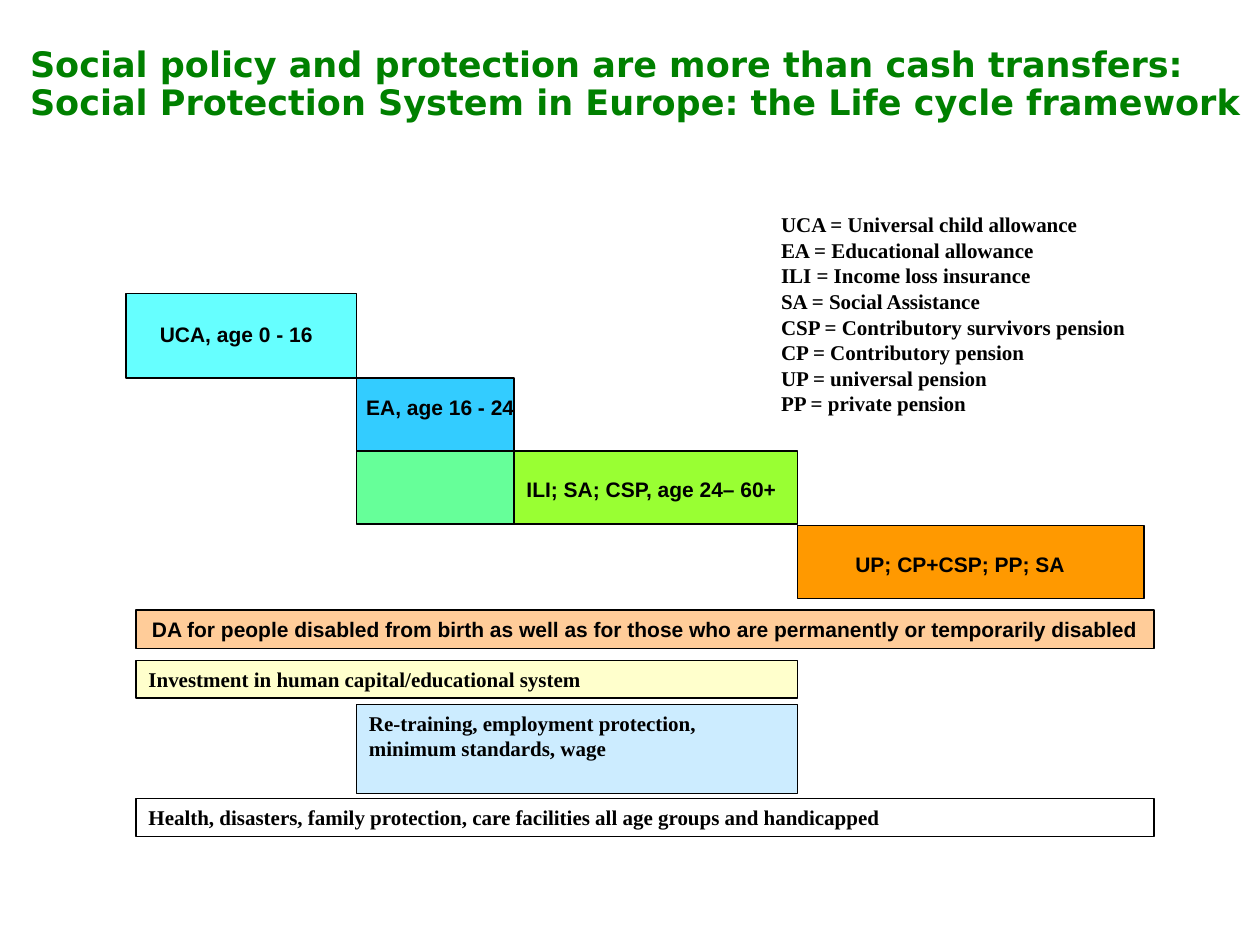
from dataclasses import dataclass

from pptx import Presentation
from pptx.dml.color import RGBColor
from pptx.enum.shapes import MSO_SHAPE
from pptx.enum.text import MSO_ANCHOR, PP_ALIGN
from pptx.util import Inches, Pt

SANS, SERIF, HEAD = "Arial", "Times New Roman", "DejaVu Sans"
BLACK, GREEN = "000000", "008000"
LEFT, MID = PP_ALIGN.LEFT, PP_ALIGN.CENTER


@dataclass(frozen=True)
class Area:
    """Position and size in inches."""
    left: float
    top: float
    width: float
    height: float


@dataclass(frozen=True)
class Style:
    """Look of a block of text."""
    font: str = SERIF
    size: int = 12
    color: str = BLACK
    align: PP_ALIGN = LEFT
    lead: float = 1.0
    gap: int = 0


@dataclass(frozen=True)
class Bar:
    """Filled bar with an optional text."""
    area: Area
    fill: str
    text: str = ""
    style: Style = Style()


@dataclass(frozen=True)
class Label:
    """Free text, one string a paragraph."""
    area: Area
    lines: list[str]
    style: Style


def paint(code: str) -> RGBColor:
    """Turn a hex string into a colour."""
    return RGBColor.from_string(code)


def place(area: Area) -> list[int]:
    """Give the four lengths of an area."""
    return [Inches(n) for n in (area.left, area.top, area.width, area.height)]


def write(shape, lines: list[str], style: Style) -> None:
    """Fill a shape with styled paragraphs."""
    frame = shape.text_frame
    frame.word_wrap = True
    frame.vertical_anchor = MSO_ANCHOR.TOP
    for i, line in enumerate(lines):
        para = frame.add_paragraph() if i else frame.paragraphs[0]
        para.text = line
        para.alignment = style.align
        para.line_spacing = style.lead
        if i:
            para.space_before = Pt(style.gap)
        font = para.font
        font.name, font.size, font.bold = style.font, Pt(style.size), True
        font.color.rgb = paint(style.color)


def draw_bar(slide, bar: Bar) -> None:
    """Draw one outlined bar."""
    shape = slide.shapes.add_shape(MSO_SHAPE.RECTANGLE, *place(bar.area))
    shape.shadow.inherit = False
    shape.fill.solid()
    shape.fill.fore_color.rgb = paint(bar.fill)
    shape.line.color.rgb = paint(BLACK)
    shape.line.width = Pt(0.75)
    if bar.text:
        write(shape, [bar.text], bar.style)


def draw_label(slide, label: Label) -> None:
    """Draw one text box."""
    write(slide.shapes.add_textbox(*place(label.area)), label.lines, label.style)


PLAIN = Style(SANS)
CENTER = Style(SANS, align=MID)

BARS = [
    Bar(Area(1, 2.33, 1.83, 0.67), "66FFFF"),
    Bar(Area(2.83, 3, 1.25, 0.58), "33CCFF"),
    Bar(Area(4.08, 3.58, 2.25, 0.58), "99FF33"),
    Bar(Area(6.33, 4.17, 2.75, 0.58), "FF9900"),
    Bar(Area(2.83, 3.58, 1.25, 0.58), "66FF99"),
    Bar(Area(1.08, 4.84, 8.08, 0.31), "FFCC99",
        "DA for people disabled from birth as well as for those who are "
        "permanently or temporarily disabled", CENTER),
    Bar(Area(1.08, 5.24, 5.25, 0.3), "FFFFCC",
        "Investment in human capital/educational system"),
    Bar(Area(2.83, 5.59, 3.5, 0.71), "CCECFF",
        "Re-training, employment protection, minimum standards, wage"),
    Bar(Area(1.08, 6.34, 8.08, 0.3), "FFFFFF",
        "Health, disasters, family protection, care facilities all age groups "
        "and handicapped"),
]

LABELS = [
    Label(Area(0.14, 0.33, 9.86, 0.94),
          ["Social policy and protection are more than cash transfers:\v"
           "Social Protection System in Europe: the Life cycle framework"],
          Style(HEAD, 20, GREEN, lead=0.9)),
    Label(Area(1, 2.5, 1.75, 0.3), ["UCA, age 0 - 16"], CENTER),
    Label(Area(2.58, 3.08, 1.83, 0.3), ["EA, age 16 - 24"], CENTER),
    Label(Area(4.08, 3.73, 2.25, 0.3), ["ILI; SA; CSP, age 24– 60+"], PLAIN),
    Label(Area(6.69, 4.33, 2.31, 0.3), ["UP; CP+CSP; PP; SA"], PLAIN),
    Label(Area(6.1, 1.7, 3.61, 1.9), [
        "UCA = Universal child allowance",
        "EA = Educational allowance",
        "ILI = Income loss insurance",
        "SA = Social Assistance",
        "CSP = Contributory survivors pension",
        "CP = Contributory pension",
        "UP = universal pension",
        "PP = private pension",
    ], Style(lead=0.6, gap=6)),
]


def main() -> None:
    """Build the slide and save it."""
    deck = Presentation()
    deck.slide_width, deck.slide_height = Inches(10), Inches(7.5)
    slide = deck.slides.add_slide(deck.slide_layouts[6])
    for bar in BARS:
        draw_bar(slide, bar)
    for label in LABELS:
        draw_label(slide, label)
    deck.save("out.pptx")


if __name__ == "__main__":
    main()
